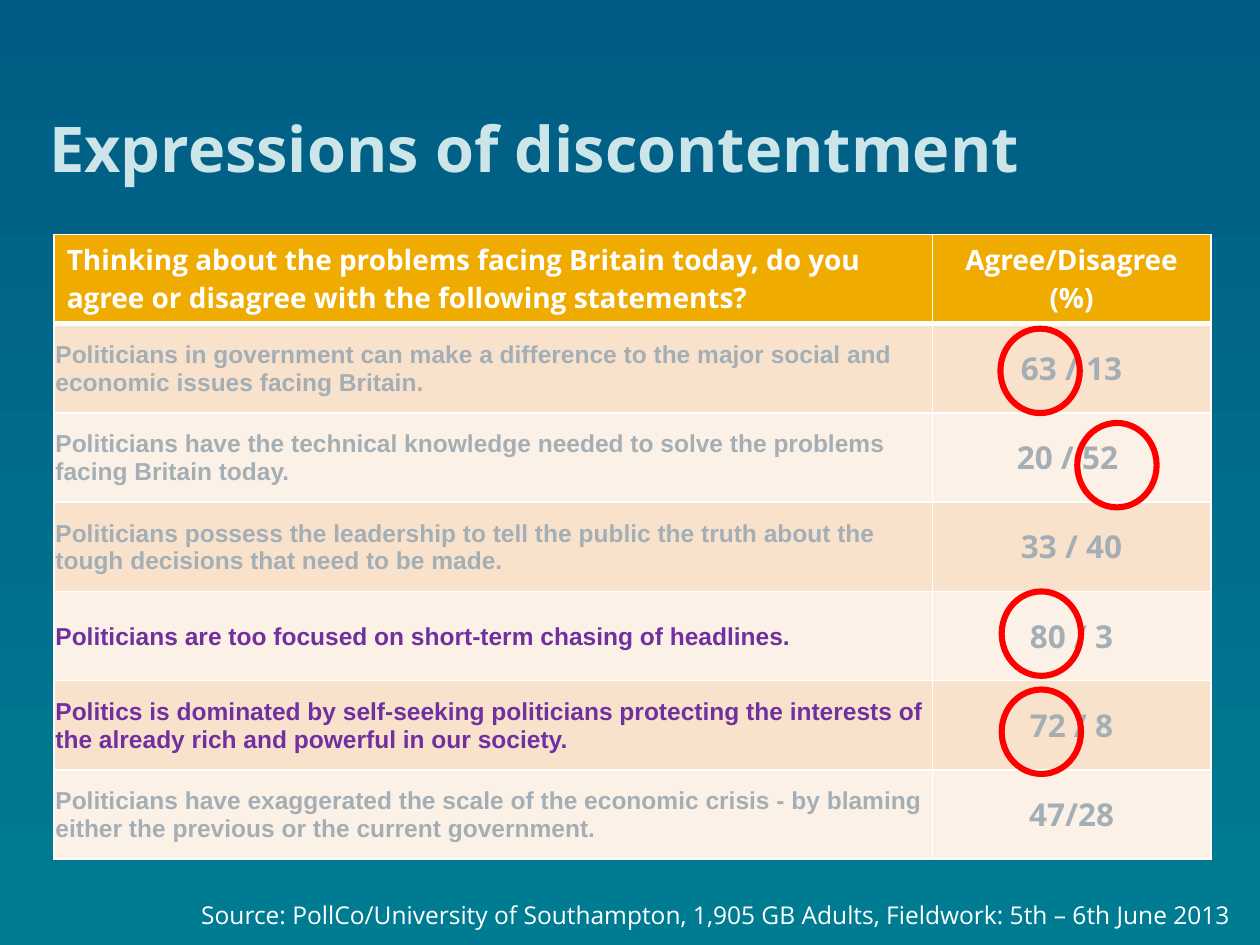
from lxml.etree import SubElement
from pptx import Presentation
from pptx.dml.color import RGBColor
from pptx.enum.shapes import MSO_SHAPE
from pptx.enum.text import MSO_ANCHOR, MSO_AUTO_SIZE, PP_ALIGN
from pptx.oxml import parse_xml
from pptx.oxml.ns import nsdecls, qn
from pptx.util import Inches, Pt

COLOURS = {
    "top": "005C84", "bottom": "007C92", "title": "CCE5E9", "white": "FFFFFF",
    "header": "F0AB00", "dark_band": "F9E2CC", "light_band": "FCF1E7",
    "grey": "A4AEB5", "purple": "7030A0", "ring": "FF0000",
}
HEADERS = [
    "Thinking about the problems facing Britain today, do you agree or disagree "
    "with the following statements?",
    "Agree/Disagree (%)",
]
# statement, agree / disagree, statement colour
STATEMENTS = [
    ("Politicians in government can make a difference to the major social and "
     "economic issues facing Britain.", "63 / 13", "grey"),
    ("Politicians have the technical knowledge needed to solve the problems "
     "facing Britain today.", "20 / 52 ", "grey"),
    ("Politicians possess the leadership to tell the public the truth about the "
     "tough decisions that need to be made.", "33 / 40", "grey"),
    ("Politicians are too focused on short-term chasing of headlines.",
     "80 / 3", "purple"),
    ("Politics is dominated by self-seeking politicians protecting the interests "
     "of the already rich and powerful in our society.", "72 / 8", "purple"),
    ("Politicians have exaggerated the scale of the economic crisis - by blaming "
     "either the previous or the current government.", "47/28", "grey"),
]
TABLE_LEFT, TABLE_TOP = 0.43, 1.86
COLUMN_WIDTHS = (6.97, 2.21)
ROW_HEIGHT = 4.96 / 7
RING_SIZE = (0.63, 0.67)
# table row, left edge, drop below the top of the row
RINGS = [(4, 7.95, 0), (5, 7.95, 0.07), (1, 7.94, 0.04), (2, 8.55, 0.08)]


def colour(name):
    return RGBColor.from_string(COLOURS[name])


def write(frame, text, size, ink, font="Open Sans", bold=False, align=PP_ALIGN.LEFT):
    frame.text = text
    para = frame.paragraphs[0]
    para.alignment = align
    para.font.name = font
    para.font.size = Pt(size)
    para.font.bold = bold
    para.font.color.rgb = colour(ink)
    return para


def paint_background(page):
    fill = page.background.fill
    fill.gradient()
    fill.gradient_angle = 270
    for stop, name, position in zip(fill.gradient_stops, ("top", "bottom"), (0, 1)):
        stop.color.rgb = colour(name)
        stop.position = position


def add_title(page, text):
    title = page.shapes.title
    title.left, title.top = Inches(0.39), 0
    title.width, title.height = Inches(9.22), Inches(1.47)
    frame = title.text_frame
    frame.auto_size = MSO_AUTO_SIZE.NONE
    frame.vertical_anchor = MSO_ANCHOR.BOTTOM
    frame.margin_left = frame.margin_right = 0
    frame.margin_top = frame.margin_bottom = 0
    write(frame, text, 36, "title", bold=True)


def style_cell(cell, fill, bottom_width=1):
    """Give the cell white borders and a solid fill."""
    properties = cell._tc.get_or_add_tcPr()
    for index, side in enumerate("LRTB"):
        width = bottom_width if side == "B" else 1
        border = parse_xml(f'<a:ln{side} {nsdecls("a")} w="{Pt(width)}"/>')
        solid = SubElement(border, qn("a:solidFill"))
        SubElement(solid, qn("a:srgbClr"), val=COLOURS["white"])
        properties.insert(index, border)
    cell.fill.solid()
    cell.fill.fore_color.rgb = colour(fill)


def add_survey_table(page):
    row_count = len(STATEMENTS) + 1
    table = page.shapes.add_table(
        row_count, 2, Inches(TABLE_LEFT), Inches(TABLE_TOP),
        Inches(sum(COLUMN_WIDTHS)), Inches(ROW_HEIGHT * row_count)).table
    for column, width in zip(table.columns, COLUMN_WIDTHS):
        column.width = Inches(width)

    for index, align in enumerate((PP_ALIGN.LEFT, PP_ALIGN.CENTER)):
        cell = table.cell(0, index)
        style_cell(cell, "header", bottom_width=3)
        write(cell.text_frame, HEADERS[index], 16, "white", bold=True, align=align)

    for row, (statement, score, ink) in enumerate(STATEMENTS, start=1):
        statement_cell, score_cell = table.cell(row, 0), table.cell(row, 1)
        for cell in (statement_cell, score_cell):
            style_cell(cell, "dark_band" if row % 2 else "light_band")
            cell.vertical_anchor = MSO_ANCHOR.MIDDLE
        statement_cell.margin_left = statement_cell.margin_right = Inches(0.01)
        statement_cell.margin_top, statement_cell.margin_bottom = Inches(0.01), 0
        write(statement_cell.text_frame, statement, 14, ink, font="Arial", bold=True)
        write(score_cell.text_frame, score, 18, "grey", bold=True,
              align=PP_ALIGN.CENTER)


def add_source(page, text):
    box = page.shapes.add_textbox(Inches(0.22), Inches(7.09), Inches(9.65), Inches(0.38))
    box.text_frame.word_wrap = True
    para = write(box.text_frame, text, 14, "white", align=PP_ALIGN.RIGHT)
    para.space_before = Pt(2.8)


def add_ring(page, row, left, drop):
    top = TABLE_TOP + row * ROW_HEIGHT + drop
    ring = page.shapes.add_shape(
        MSO_SHAPE.OVAL, Inches(left), Inches(top), *map(Inches, RING_SIZE))
    ring.shadow.inherit = False
    ring.fill.background()
    ring.line.color.rgb = colour("ring")
    ring.line.width = Pt(3.5)


def main():
    deck = Presentation()
    deck.slide_width, deck.slide_height = Inches(10), Inches(7.5)
    page = deck.slides.add_slide(deck.slide_layouts[5])
    paint_background(page)
    add_title(page, "Expressions of discontentment")
    add_survey_table(page)
    add_source(page, "Source: PollCo/University of Southampton, 1,905 GB Adults, "
                     "Fieldwork: 5th – 6th June 2013")
    for ring in RINGS:
        add_ring(page, *ring)
    deck.save("out.pptx")


if __name__ == "__main__":
    main()
